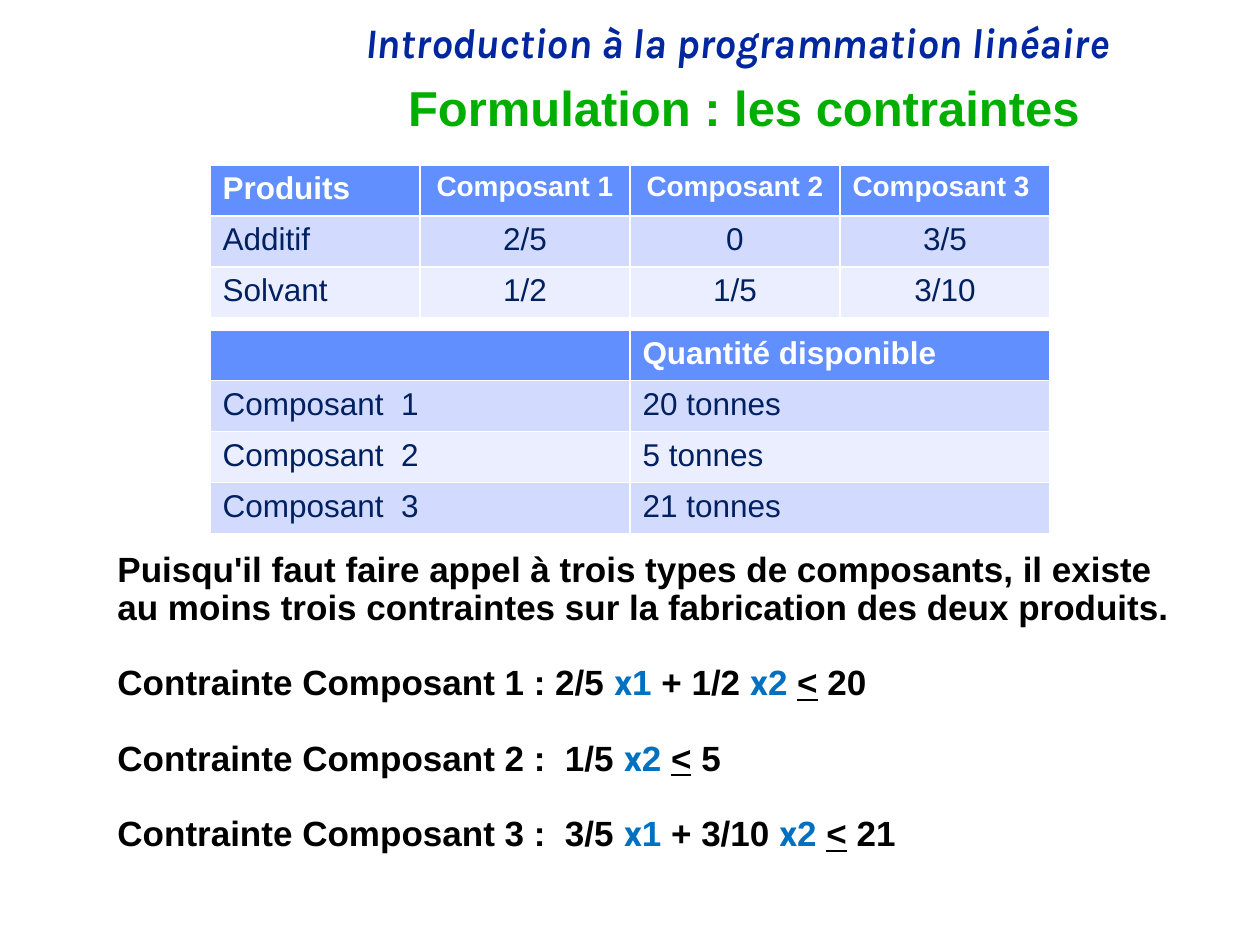
from pptx import Presentation
from pptx import util as u
from pptx.dml.color import RGBColor
from pptx.enum import text

PX = 7257  # EMU per px, 126 px to the inch

NAVY = RGBColor(0x00, 0x27, 0x9F)
GREEN = RGBColor(0x00, 0xAE, 0x00)
BLACK = RGBColor(0x00, 0x00, 0x00)
BLUE = RGBColor(0x00, 0x70, 0xC0)
WHITE = RGBColor(0xFF, 0xFF, 0xFF)
INK = RGBColor(0x00, 0x20, 0x60)
HEAD = RGBColor(0x61, 0x8F, 0xFD)
BANDS = RGBColor(0xD2, 0xDB, 0xFE), RGBColor(0xEA, 0xEE, 0xFF)

LEFT, MID = text.PP_ALIGN.LEFT, text.PP_ALIGN.CENTER

BASE = {"name": "Arial", "size": u.Pt(20), "bold": True}
PLAIN = {"color": BLACK}
VAR = {"color": BLUE, "name": "Roboto"}
NUM = {"color": BLUE}
UNDER = {"color": BLACK, "underline": True}


def px(*vals):
    return [u.Emu(v * PX) for v in vals]


def add_run(para, words, **form):
    font = para.add_run()
    font.text = words
    font = font.font
    for key, val in {**BASE, **form}.items():
        if key == "color":
            font.color.rgb = val
        else:
            setattr(font, key, val)


def add_text(slide, box, paras, anchor=text.MSO_ANCHOR.TOP, **form):
    """Each paragraph is a list of (words, font format) runs."""
    frame = slide.shapes.add_textbox(*px(*box)).text_frame
    frame.word_wrap = True
    frame.vertical_anchor = anchor
    for i, runs in enumerate(paras):
        para = frame.paragraphs[0] if i == 0 else frame.add_paragraph()
        for key, val in {"line_spacing": 0.9, **form}.items():
            setattr(para, key, val)
        for words, font in runs:
            add_run(para, words, **font)


def add_grid(slide, box, rows, sizes, aligns, heights):
    """Header row, then banded rows; white rules come from the table style."""
    grid = slide.shapes.add_table(len(rows), len(rows[0]), *px(*box)).table
    for row, high in zip(grid.rows, px(*heights)):
        row.height = high
    for r, row in enumerate(rows):
        for c, words in enumerate(row):
            cell = grid.cell(r, c)
            cell.fill.solid()
            cell.fill.fore_color.rgb = BANDS[(r - 1) % 2] if r else HEAD
            para = cell.text_frame.paragraphs[0]
            para.alignment = aligns[c]
            if words:
                add_run(para, words, bold=r == 0, color=INK if r else WHITE,
                        size=u.Pt(18 if r else sizes[c]))


def limit(num, terms, bound):
    """Runs of one constraint; terms are (coefficient, index) pairs."""
    runs = [(f"Contrainte Composant {num} : ", PLAIN)]
    for i, (coef, index) in enumerate(terms):
        lead = " + " if i else "" if num == 1 else " "
        runs += [(f"{lead}{coef} ", PLAIN), ("x", VAR), (index, NUM)]
    return runs + [(" ", PLAIN), ("<", UNDER), (f" {bound}", PLAIN)]


def main():
    prs = Presentation()
    prs.slide_width, prs.slide_height = px(1260, 945)
    slide = prs.slides.add_slide(prs.slide_layouts[6])

    # Course name and title
    add_text(slide, (353, 16, 1018, 58),
             [[("Introduction à la programmation linéaire",
                {"name": "Karla", "size": u.Pt(24), "italic": True, "color": NAVY})]])
    add_text(slide, (63, 32, 1029, 157),
             [[("Formulation : les contraintes", {"size": u.Pt(28), "color": GREEN})]],
             text.MSO_ANCHOR.MIDDLE, alignment=text.PP_ALIGN.RIGHT)

    # Composition of the products
    add_grid(slide, (210, 165, 840, 153),
             [["Produits", "Composant 1", "Composant 2", "Composant 3 "],
              ["Additif", "2/5", "0", "3/5"],
              ["Solvant", "1/2", "1/5", "3/10"]],
             [18, 16, 16, 16], [LEFT, MID, MID, MID], [51] * 3)

    # Available quantities
    stock = [20, 5, 21]
    add_grid(slide, (210, 330, 840, 203),
             [["", "Quantité disponible"]]
             + [[f"Composant  {i}", f"{n} tonnes"] for i, n in enumerate(stock, 1)],
             [18, 18], [LEFT, LEFT], [50, 51, 51, 51])

    # Constraints
    terms = [[("2/5", "1"), ("1/2", "2")], [("1/5", "2")], [("3/5", "1"), ("3/10", "2")]]
    intro = ("Puisqu'il faut faire appel à trois types de composants, il existe "
             "au moins trois contraintes sur la fabrication des deux produits.")
    add_text(slide, (105, 546, 1081, 318),
             [[(intro, PLAIN)]]
             + [limit(i, t, n) for i, (t, n) in enumerate(zip(terms, stock), 1)],
             space_after=u.Pt(21.6))

    prs.save("out.pptx")


if __name__ == "__main__":
    main()
